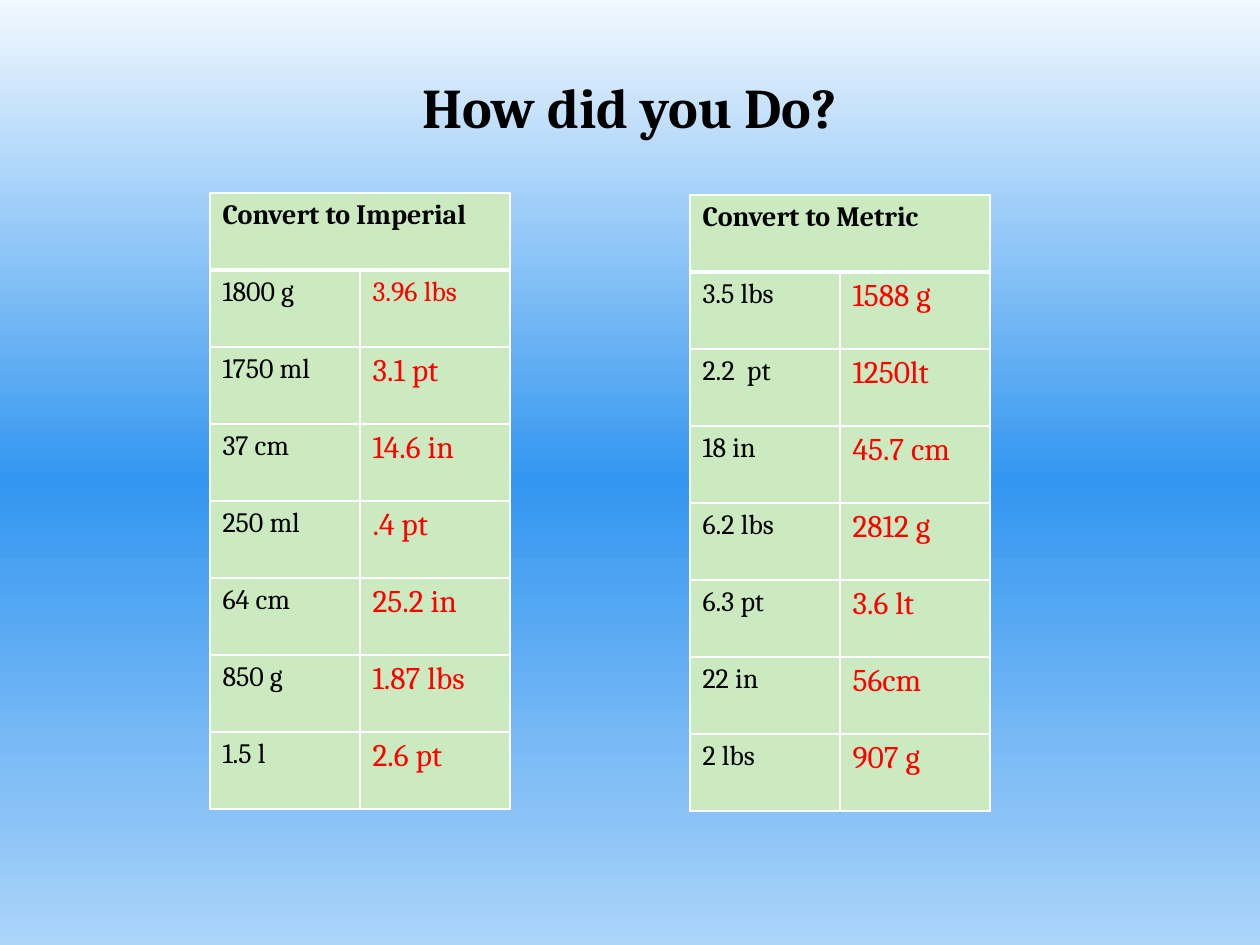
from dataclasses import dataclass

from lxml.etree import SubElement
from pptx import Presentation
from pptx.dml.color import RGBColor
from pptx.enum.text import MSO_ANCHOR, PP_ALIGN
from pptx.oxml.ns import qn
from pptx.util import Pt

TITLE = "How did you Do?"
TABLES = [
    {"left": 210, "top": 193, "header": "Convert to Imperial", "rows": [
        ("1800 g", "3.96 lbs"), ("1750 ml", "3.1 pt"), ("37 cm", "14.6 in"),
        ("250 ml", ".4 pt"), ("64 cm", "25.2 in"), ("850 g", "1.87 lbs"),
        ("1.5 l", "2.6 pt")]},
    {"left": 690, "top": 195, "header": "Convert to Metric", "rows": [
        ("3.5 lbs", "1588 g"), ("2.2  pt", "1250lt"), ("18 in", "45.7 cm"),
        ("6.2 lbs", "2812 g"), ("6.3 pt", "3.6 lt"), ("22 in", "56cm"),
        ("2 lbs", "907 g")]},
]
SMALL_ANSWERS = {"3.96 lbs"}


@dataclass(frozen=True)
class Theme:
    font: str = "Cambria"
    ink: str = "000000"
    answer: str = "FF0000"
    cell: str = "CBEAC0"
    border: str = "FFFFFF"
    background: tuple = ((0, "F1F8FE"), (51, "3396F0"), (83, "83BFF6"), (100, "ACD4F9"))
    title_size: int = 32
    text_size: int = 16
    answer_size: int = 18
    thin: int = 1
    thick: int = 3


THEME = Theme()
SLIDE_W, SLIDE_H = 1260, 945
COL_W, ROW_H = 150, 77


def px(n):
    return n * 914400 // 126


def add_color(parent, color):
    SubElement(parent, qn("a:srgbClr"), val=color)


def paint_background(slide):
    fill = slide.background.fill
    fill.gradient()
    fill.gradient_angle = 270
    stops = slide.element.find(".//" + qn("a:gsLst"))
    for stop in list(stops):
        stops.remove(stop)
    for percent, color in THEME.background:
        add_color(SubElement(stops, qn("a:gs"), pos=str(percent * 1000)), color)


def style_text(tf, size, color, bold=False):
    for p in tf.paragraphs:
        for r in p.runs:
            r.font.name = THEME.font
            r.font.size = Pt(size)
            r.font.bold = bold
            r.font.color.rgb = RGBColor.from_string(color)


def set_borders(cell, top, bottom):
    tc_pr = cell._tc.get_or_add_tcPr()
    widths = {"L": THEME.thin, "R": THEME.thin, "T": top, "B": bottom}
    for side, width in widths.items():
        ln = SubElement(tc_pr, qn(f"a:ln{side}"), w=str(Pt(width)))
        add_color(SubElement(ln, qn("a:solidFill")), THEME.border)


def fill_cell(cell, row, text, size, color):
    """Write one cell; a thick rule runs between the header and row 1."""
    set_borders(cell, THEME.thick if row == 1 else THEME.thin,
                THEME.thick if row == 0 else THEME.thin)
    cell.fill.solid()
    cell.fill.fore_color.rgb = RGBColor.from_string(THEME.cell)
    cell.text_frame.text = text
    style_text(cell.text_frame, size, color, bold=row == 0)


def add_conversion_table(slide, left, top, header, rows):
    count = len(rows) + 1
    table = slide.shapes.add_table(count, 2, px(left), px(top),
                                   px(2 * COL_W), px(count * ROW_H)).table
    for col in table.columns:
        col.width = px(COL_W)
    for row in table.rows:
        row.height = px(ROW_H)
    table.horz_banding = False
    table.cell(0, 0).merge(table.cell(0, 1))
    for c, text in enumerate((header, "")):
        fill_cell(table.cell(0, c), 0, text, THEME.text_size, THEME.ink)
    for r, (question, answer) in enumerate(rows, start=1):
        size = THEME.text_size if answer in SMALL_ANSWERS else THEME.answer_size
        fill_cell(table.cell(r, 0), r, question, THEME.text_size, THEME.ink)
        fill_cell(table.cell(r, 1), r, answer, size, THEME.answer)


def add_title(slide):
    tf = slide.shapes.add_textbox(0, px(66), px(SLIDE_W), px(81)).text_frame
    tf.word_wrap = True
    tf.vertical_anchor = MSO_ANCHOR.TOP
    tf.text = TITLE
    tf.paragraphs[0].alignment = PP_ALIGN.CENTER
    style_text(tf, THEME.title_size, THEME.ink, bold=True)


def main():
    prs = Presentation()
    prs.slide_width, prs.slide_height = px(SLIDE_W), px(SLIDE_H)
    slide = prs.slides.add_slide(prs.slide_layouts[6])
    paint_background(slide)
    add_title(slide)
    for table in TABLES:
        add_conversion_table(slide, **table)
    prs.save("out.pptx")


if __name__ == "__main__":
    main()
